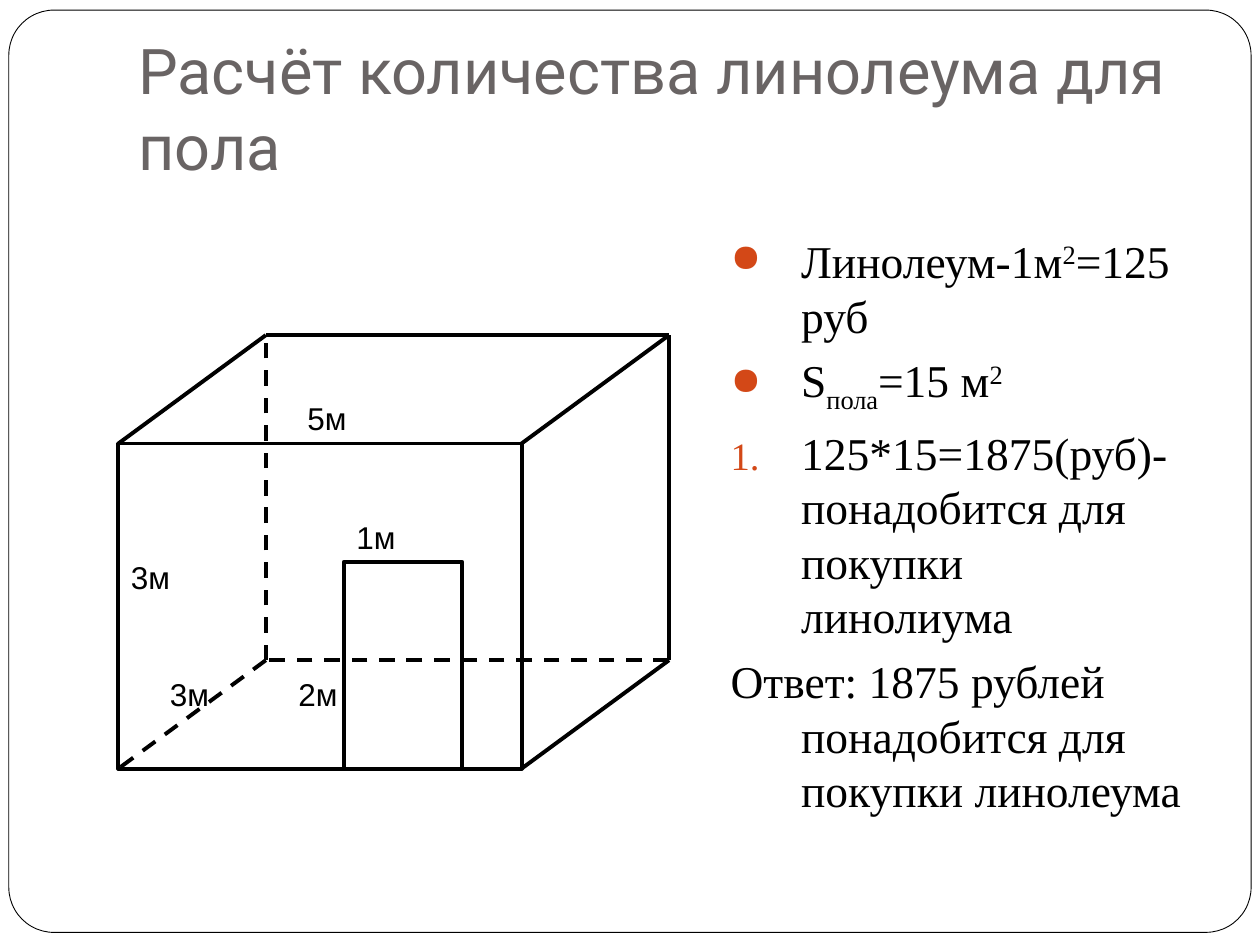
from lxml import etree
from pptx import Presentation
from pptx.dml.color import RGBColor
from pptx.enum.dml import MSO_LINE
from pptx.enum.shapes import MSO_CONNECTOR, MSO_SHAPE
from pptx.enum.text import MSO_ANCHOR
from pptx.oxml.ns import qn
from pptx.util import Inches, Pt

STRAIGHT = MSO_CONNECTOR.STRAIGHT
RECTANGLE = MSO_SHAPE.RECTANGLE
ROUNDED = MSO_SHAPE.ROUNDED_RECTANGLE
DASH = MSO_LINE.DASH
TOP, BOTTOM = MSO_ANCHOR.TOP, MSO_ANCHOR.BOTTOM

BLACK, WHITE, GREY, ORANGE = "000000", "FFFFFF", "696464", "D34817"
TITLE = {"name": "Roboto", "size": Pt(36), "color": GREY}
BODY = {"name": "Times New Roman", "size": Pt(26), "color": BLACK}
LABEL = {"name": "Arial", "size": Pt(18), "color": BLACK}
SUPERSCRIPT, SUBSCRIPT = 30000, -25000


def rgb(value):
    return RGBColor.from_string(value)


class SlideBuilder:
    """Holds the line style and the current slide."""

    line_width = 2.25
    hanging_indent = 0.56
    space_before = 5.8

    def __init__(self, slide):
        self.slide = slide

    def outline(self, kind, box, width=line_width, fill=None):
        shape = self.slide.shapes.add_shape(kind, *map(Inches, box))
        shape.shadow.inherit = False
        if fill:
            shape.fill.solid()
            shape.fill.fore_color.rgb = rgb(fill)
        else:
            shape.fill.background()
        shape.line.color.rgb = rgb(BLACK)
        shape.line.width = Pt(width)
        return shape

    def edge(self, start, end, dash=None):
        connector = self.slide.shapes.add_connector(
            STRAIGHT, *map(Inches, (*start, *end)))
        connector.line.color.rgb = rgb(BLACK)
        connector.line.width = Pt(self.line_width)
        if dash:
            connector.line.dash_style = dash
        properties = connector._element.spPr
        etree.SubElement(properties, qn("a:effectLst"))

    def run(self, paragraph, text, style, baseline=0):
        run = paragraph.add_run()
        run.text = text
        for name, value in style.items():
            if name == "color":
                run.font.color.rgb = rgb(value)
            else:
                setattr(run.font, name, value)
        if baseline:
            run._r.get_or_add_rPr().set("baseline", str(baseline))

    def text(self, box, content, style, anchor=TOP, bottom_inset=0.05):
        text_box = self.slide.shapes.add_textbox(*map(Inches, box))
        frame = text_box.text_frame
        frame.word_wrap = True
        frame.vertical_anchor = anchor
        frame.margin_bottom = Inches(bottom_inset)
        if content:
            self.run(frame.paragraphs[0], content, style)
        return frame

    def bullet(self, paragraph, tag, attributes):
        properties = paragraph._p.get_or_add_pPr()
        color = etree.SubElement(properties, qn("a:buClr"))
        etree.SubElement(color, qn("a:srgbClr"), val=ORANGE)
        etree.SubElement(properties, qn("a:buSzPct"), val="85000")
        etree.SubElement(properties, qn(tag), **attributes)

    def body(self, box, items):
        frame = self.text(box, None, BODY)
        for index, (marker, parts) in enumerate(items):
            paragraph = frame.add_paragraph() if index else frame.paragraphs[0]
            paragraph.space_before = Pt(self.space_before)
            properties = paragraph._p.get_or_add_pPr()
            indent = Inches(self.hanging_indent)
            properties.set("marL", str(indent))
            properties.set("indent", str(-indent))
            if marker:
                self.bullet(paragraph, *marker)
            for text, baseline in parts:
                self.run(paragraph, text, BODY, baseline)


def main():
    presentation = Presentation()
    presentation.slide_width, presentation.slide_height = Inches(10), Inches(7.5)
    slide = presentation.slides.add_slide(presentation.slide_layouts[6])
    builder = SlideBuilder(slide)

    # Frame and title
    frame = builder.outline(ROUNDED, (0.07, 0.08, 9.86, 7.32), 0.5, WHITE)
    frame.adjustments[0] = 0.049
    builder.text((1, 0.3, 8.5, 1.25), "Расчёт количества линолеума для пола",
                 TITLE, BOTTOM, 0.1)

    # Calculation
    dot = ("a:buChar", {"char": "●"})
    number = ("a:buAutoNum", {"type": "arabicPeriod"})
    builder.body((5.7, 1.8, 3.79, 4.95), [
        (dot, [("Линолеум-1м", 0), ("2", SUPERSCRIPT), ("=125 руб", 0)]),
        (dot, [("S", 0), ("пола", SUBSCRIPT), ("=15 м", 0), ("2", SUPERSCRIPT)]),
        (number, [("125*15=1875(руб)-понадобится для покупки линолиума", 0)]),
        (None, [("Ответ: 1875 рублей понадобится для покупки линолеума", 0)]),
    ])

    # Room: front wall, door, then the edges running to the back wall
    left, top, width, height = 0.94, 3.52, 3.2, 2.58
    depth_x, depth_y = 1.17, -0.86
    right, bottom = left + width, top + height
    door_width, door_height = 0.94, 1.64
    builder.outline(RECTANGLE, (left, top, width, height))
    builder.outline(RECTANGLE, (2.73, bottom - door_height, door_width, door_height))

    front = {"top left": (left, top), "top right": (right, top),
             "bottom right": (right, bottom), "bottom left": (left, bottom)}
    back = {name: (x + depth_x, y + depth_y) for name, (x, y) in front.items()}
    corners = list(front)
    hidden = "bottom left"
    for corner, following in zip(corners, corners[1:] + corners[:1]):
        builder.edge(back[corner], front[corner], DASH if corner == hidden else None)
        builder.edge(back[corner], back[following],
                     DASH if hidden in (corner, following) else None)

    # Dimensions
    for text, x, y in [("3м", 0.94, 4.38), ("5м", 2.34, 3.12), ("3м", 1.25, 5.31),
                       ("1м", 2.73, 4.06), ("2м", 2.27, 5.31)]:
        builder.text((x, y, 1.02, 0.4), text, LABEL)

    presentation.save("out.pptx")


if __name__ == "__main__":
    main()
